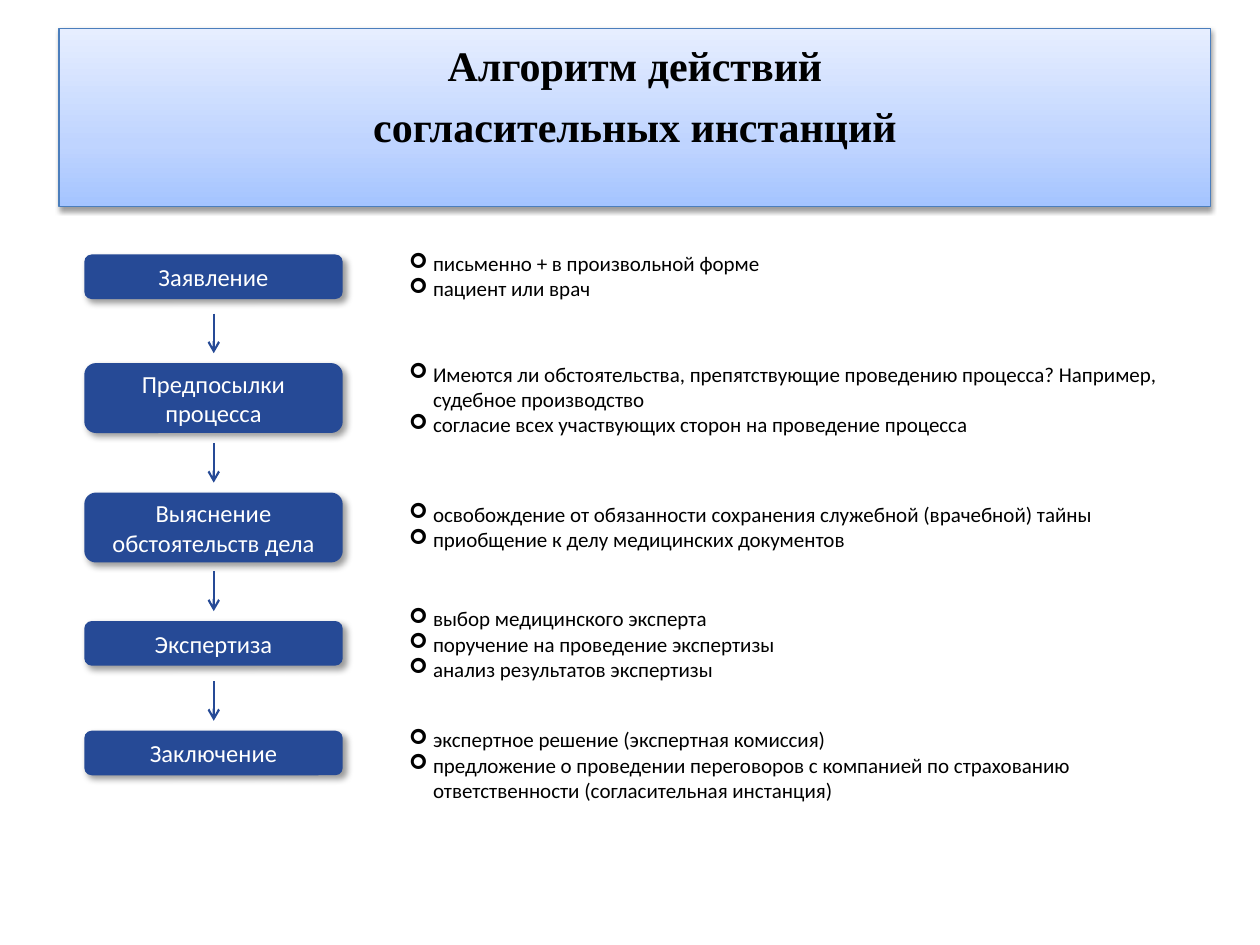
"""Build a slide with the five-step procedure of the conciliation bodies."""
from copy import deepcopy

from lxml.etree import SubElement
from pptx import Presentation
from pptx.dml.color import RGBColor
from pptx.enum.shapes import MSO_CONNECTOR as LINK, MSO_SHAPE as SHAPE
from pptx.enum.text import MSO_ANCHOR as ANCHOR, MSO_AUTO_SIZE as FIT, PP_ALIGN as ALIGN
from pptx.oxml import parse_xml
from pptx.oxml.ns import qn
from pptx.util import Cm, Pt

BLUE = "264A96"
NAMESPACE = "http://schemas.openxmlformats.org/drawingml/2006/main"


def write(frame, lines, size, color="000000", font="Calibri", bold=False,
          align=ALIGN.LEFT, spacing=None, bullet=None):
    """Fill a text frame with one formatted paragraph per line."""
    frame.word_wrap = True
    for index, line in enumerate(lines):
        para = frame.add_paragraph() if index else frame.paragraphs[0]
        para.alignment = align
        if spacing:
            para.line_spacing = Pt(spacing)
        if bullet:
            props = para._p.get_or_add_pPr()
            props.set("marL", str(Cm(0.48)))
            props.set("indent", str(-Cm(0.48)))
            SubElement(props, qn("a:buFont"), typeface="Wingdings")
            SubElement(props, qn("a:buChar"), char=bullet)
        span = para.add_run()
        span.text = line
        span.font.name, span.font.size, span.font.bold = font, Pt(size), bold
        span.font.color.rgb = RGBColor.from_string(color)


def add_shadow(shape, blur, distance, angle, opacity):
    """Give a shape an outer black shadow."""
    shape.shadow.inherit = False
    shape._element.spPr.find(qn("a:effectLst")).append(parse_xml(
        f'<a:outerShdw xmlns:a="{NAMESPACE}" blurRad="{Pt(blur)}" dist="{Pt(distance)}" '
        f'dir="{angle * 60000}" algn="tl" rotWithShape="0"><a:srgbClr val="000000">'
        f'<a:alpha val="{opacity * 1000}"/></a:srgbClr></a:outerShdw>'))


deck = Presentation()
deck.slide_width, deck.slide_height = Cm(25.4), Cm(19.05)
slide = deck.slides.add_slide(deck.slide_layouts[5])

title = slide.shapes.title
title.left, title.top, title.width, title.height = Cm(1.19), Cm(0.58), Cm(23.22), Cm(3.58)
title.fill.gradient()
title.fill.gradient_angle = 90
first_stop = title._element.xpath(".//a:gs")[0]
first_stop.addnext(deepcopy(first_stop))
gradient = [(0, "A4C4FF"), (0.35, "BFD4FF"), (1, "E6EEFF")]
for stop, (position, color) in zip(title.fill.gradient_stops, gradient):
    stop.position = position
    stop.color.rgb = RGBColor.from_string(color)
title.line.color.rgb = RGBColor.from_string("4B7EBC")
title.line.width = Pt(0.75)
add_shadow(title, 3.1, 1.6, 90, 38)
heading = title.text_frame
heading.margin_left = heading.margin_right = heading.margin_top = heading.margin_bottom = 0
heading.vertical_anchor = ANCHOR.TOP
heading.auto_size = FIT.NONE
write(heading, ["Алгоритм действий", "согласительных инстанций"], 24,
      font="Times New Roman", bold=True, align=ALIGN.CENTER, spacing=35)

steps = [
    ("Заявление", 5.13, 0.9, 4.93, 8.51, 1.3,
     ["письменно + в произвольной форме", "пациент или врач"]),
    ("Предпосылки процесса", 7.32, 1.41, 7.16, 16.51, 1.8,
     ["Имеются ли обстоятельства, препятствующие проведению процесса? "
      "Например, судебное производство",
      "согласие всех участвующих сторон на проведение процесса"]),
    ("Выяснение обстоятельств дела", 9.93, 1.41, 9.98, 15.9, 1.3,
     ["освобождение от обязанности сохранения служебной (врачебной) тайны",
      "приобщение к делу медицинских документов"]),
    ("Экспертиза", 12.52, 0.9, 12.09, 9.25, 1.8,
     ["выбор медицинского эксперта", "поручение на проведение экспертизы",
      "анализ результатов экспертизы"]),
    ("Заключение", 14.73, 0.9, 14.53, 16.51, 1.8,
     ["экспертное решение (экспертная комиссия)",
      "предложение о проведении переговоров с компанией по страхованию "
      "ответственности (согласительная инстанция)"]),
]
for index, (name, top, height, note_top, note_width, note_height, notes) in enumerate(steps):
    box = slide.shapes.add_shape(SHAPE.ROUNDED_RECTANGLE, Cm(1.7), Cm(top), Cm(5.21), Cm(height))
    box.fill.solid()
    box.fill.fore_color.rgb = RGBColor.from_string(BLUE)
    box.line.fill.background()
    add_shadow(box, 4, 3, 45, 40)
    box.text_frame.vertical_anchor = ANCHOR.MIDDLE
    write(box.text_frame, [name], 14, color="FFFFFF", align=ALIGN.CENTER)

    if index:
        arrow = slide.shapes.add_connector(
            LINK.STRAIGHT, Cm(4.31), Cm(top - 1), Cm(4.31), Cm(top - 0.2))
        arrow.line.color.rgb = RGBColor.from_string(BLUE)
        arrow.line.width = Pt(1.25)
        SubElement(arrow.line._get_or_add_ln(), qn("a:tailEnd"), type="arrow")
        SubElement(arrow._element.spPr, qn("a:effectLst"))

    note = slide.shapes.add_textbox(Cm(8), Cm(note_top), Cm(note_width), Cm(note_height))
    note.text_frame.auto_size = FIT.SHAPE_TO_FIT_TEXT
    write(note.text_frame, notes, 12, bullet="➢")

deck.save("out.pptx")
